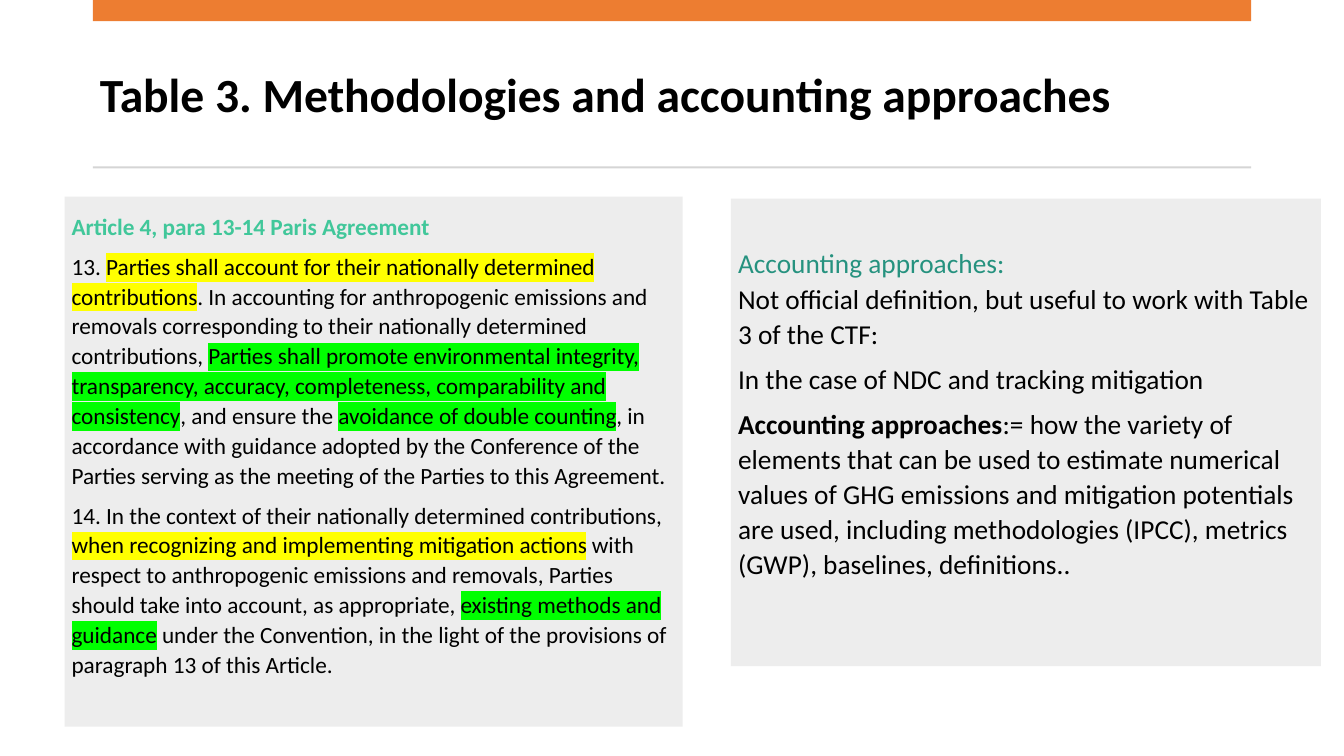
import pptx
import pptx.util
import pptx.dml.color
import pptx.enum.shapes
import pptx.enum.text
import pptx.oxml
import pptx.oxml.ns

Inches = pptx.util.Inches
Pt = pptx.util.Pt

COLORS = {
    "black": "000000",
    "orange": "ED7D31",
    "rule": "D5D5D5",
    "panel": "EDEDED",
    "teal": "26927F",
    "mint": "41C79A",
    "yellow": "FFFF00",
    "green": "00FF00",
}


def rgb(name):
    return pptx.dml.color.RGBColor.from_string(COLORS[name])


class Deck:
    font = "Calibri"

    def __init__(self):
        self.prs = pptx.Presentation()
        self.prs.slide_width = Inches(13.33)
        self.prs.slide_height = Inches(7.5)
        self.slide = self.prs.slides.add_slide(self.prs.slide_layouts[6])

    def rect(self, left, top, width, height, fill):
        kind = pptx.enum.shapes.MSO_SHAPE.RECTANGLE
        shape = self.slide.shapes.add_shape(
            kind, Inches(left), Inches(top), Inches(width), Inches(height))
        shape.shadow.inherit = False
        shape.fill.solid()
        shape.fill.fore_color.rgb = rgb(fill)
        shape.line.fill.background()
        return shape

    def box(self, left, top, width, height):
        return self.slide.shapes.add_textbox(
            Inches(left), Inches(top), Inches(width), Inches(height))

    def run(self, para, text, size, color="black", bold=False, mark=None):
        run = para.add_run()
        run.text = text
        font = run.font
        font.name, font.size, font.bold = self.font, Pt(size), bold
        font.color.rgb = rgb(color)
        if mark:
            ns = pptx.oxml.ns.nsdecls("a")
            light = pptx.oxml.parse_xml(
                f'<a:highlight {ns}><a:srgbClr val="{COLORS[mark]}"/></a:highlight>')
            fill = run._r.get_or_add_rPr().find(pptx.oxml.ns.qn("a:solidFill"))
            fill.addnext(light)

    def text(self, shape, size, paras, base=0.04):
        """Each paragraph is (line spacing, points after, runs)."""
        frame = shape.text_frame
        frame.word_wrap = True
        frame.vertical_anchor = pptx.enum.text.MSO_ANCHOR.MIDDLE
        frame.margin_left = frame.margin_right = Inches(0.07)
        frame.margin_top, frame.margin_bottom = Inches(0.04), Inches(base)
        for i, (space, after, runs) in enumerate(paras):
            para = frame.add_paragraph() if i else frame.paragraphs[0]
            para.alignment = pptx.enum.text.PP_ALIGN.LEFT
            para.line_spacing = space
            para.space_before, para.space_after = Pt(0), Pt(after)
            for words, style in runs:
                self.run(para, words, size, **style)


def main():
    deck = Deck()
    plain, bold = {}, {"bold": True}
    yellow, green = {"mark": "yellow"}, {"mark": "green"}

    # Title with bar and rule
    title = deck.box(0.92, 0.37, 11.49, 1.18)
    deck.text(title, 34, [
        (0.9, 0, [("Table 3. Methodologies and accounting approaches", bold)])])
    deck.rect(0.92, 0, 11.49, 0.21, "orange")
    deck.rect(0.92, 1.65, 11.49, 0.02, "rule")

    # Accounting approaches panel
    right = deck.rect(7.25, 1.97, 5.85, 4.64, "panel")
    deck.text(right, 19.5, [
        (0.9, 0, [("Accounting approaches:", {"color": "teal"})]),
        (1.07, 7.2, [("Not official definition, but useful to work with "
                      "Table 3 of the CTF:", plain)]),
        (1.07, 7.2, [("In the case of NDC and tracking mitigation", plain)]),
        (1.07, 0, [
            ("Accounting approaches", bold),
            (":= how the variety of elements that can be used to estimate "
             "numerical values of GHG emissions and mitigation potentials are "
             "used, including methodologies (IPCC), metrics (GWP), baselines, "
             "definitions..", plain)]),
    ], base=0.38)

    # Paris Agreement panel
    left = deck.rect(0.64, 1.95, 6.13, 5.26, "panel")
    deck.text(left, 16.6, [
        (1.07, 7.2, [("Article 4, para 13-14 Paris Agreement",
                      {"color": "mint", "bold": True})]),
        (1.07, 7.2, [
            ("13. ", plain),
            ("Parties shall account for their nationally determined "
             "contributions", yellow),
            (". In accounting for anthropogenic emissions and removals "
             "corresponding to their nationally determined contributions, ", plain),
            ("Parties shall promote environmental integrity, transparency, "
             "accuracy, completeness, comparability and consistency", green),
            (", and ensure the ", plain),
            ("avoidance of double counting", green),
            (", in accordance with guidance adopted by the Conference of the "
             "Parties serving as the meeting of the Parties to this "
             "Agreement.", plain)]),
        (1.07, 0, [
            ("14. In the context of their nationally determined "
             "contributions, ", plain),
            ("when recognizing and implementing mitigation actions", yellow),
            (" with respect to anthropogenic emissions and removals, Parties "
             "should take into account, as appropriate, ", plain),
            ("existing methods and guidance", green),
            (" under the Convention, in the light of the provisions of "
             "paragraph 13 of this Article.", plain)]),
    ], base=0.39)

    deck.prs.save("out.pptx")


if __name__ == "__main__":
    main()
